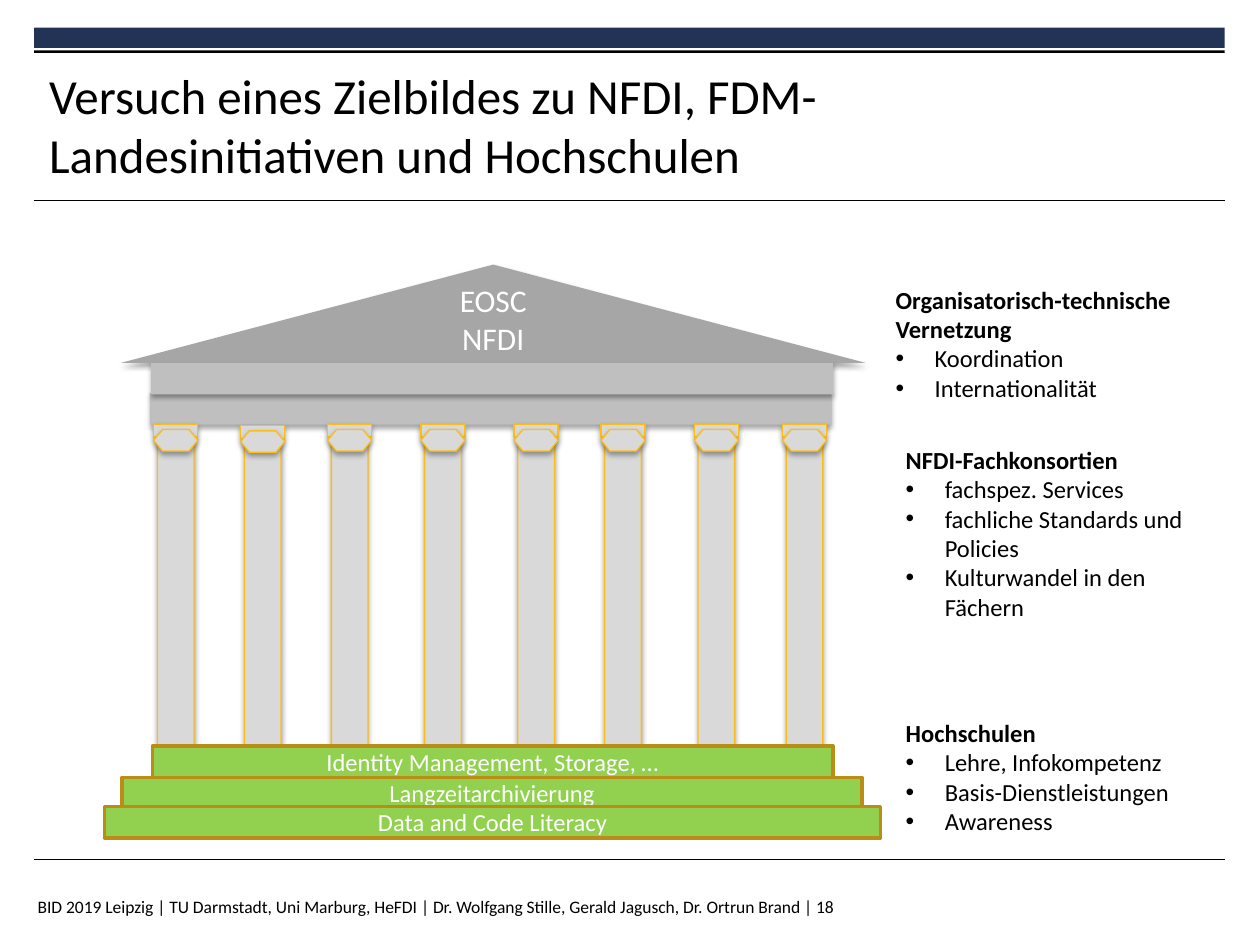
from lxml import etree
from pptx import Presentation
from pptx.dml.color import RGBColor
from pptx.enum.shapes import MSO_CONNECTOR, MSO_SHAPE
from pptx.enum.text import MSO_ANCHOR, MSO_AUTO_SIZE, PP_ALIGN
from pptx.oxml.ns import qn
from pptx.util import Inches, Pt

COLORS = {
    "navy": "233356", "black": "000000", "white": "FFFFFF",
    "roof": "A6A6A6", "beam": "BFBFBF", "column": "D9D9D9",
    "gold": "FBBE18", "step": "92D050", "step_line": "BA8E16",
}


def add_block(shapes, kind, box, fill, line=None, line_width=0.75, shadow=False):
    """Add a filled preset shape, with an optional outline and soft shadow below."""
    shape = shapes.add_shape(kind, *[Inches(value) for value in box])
    shape.shadow.inherit = False
    shape.fill.solid()
    shape.fill.fore_color.rgb = RGBColor.from_string(COLORS[fill])
    if line:
        shape.line.color.rgb = RGBColor.from_string(COLORS[line])
        shape.line.width = Pt(line_width)
    else:
        shape.line.fill.background()
    if shadow:
        effects = shape._element.spPr.find(qn("a:effectLst"))
        outer = etree.SubElement(effects, qn("a:outerShdw"), blurRad=str(Pt(3.1)),
                                 dist=str(Pt(1.8)), dir="5400000", rotWithShape="0")
        color = etree.SubElement(outer, qn("a:srgbClr"), val=COLORS["black"])
        etree.SubElement(color, qn("a:alpha"), val="35000")
    return shape


def add_text(paragraph, text, size, color="black", bold=False):
    run = paragraph.add_run()
    run.text = text
    run.font.name = "Calibri"
    run.font.size = Pt(size)
    run.font.bold = bold
    run.font.color.rgb = RGBColor.from_string(COLORS[color])


presentation = Presentation()
presentation.slide_width = Inches(10)
presentation.slide_height = Inches(7.5)
slide = presentation.slides.add_slide(presentation.slide_layouts[5])

# Header bars and rules
add_block(slide.shapes, MSO_SHAPE.RECTANGLE, (0.27, 0.22, 9.45, 0.16), "navy")
add_block(slide.shapes, MSO_SHAPE.RECTANGLE, (0.27, 0.4, 9.45, 0.02), "black")
for rule_top in (1.59, 6.82):
    rule = slide.shapes.add_connector(MSO_CONNECTOR.STRAIGHT, Inches(0.27), Inches(rule_top),
                                      Inches(9.72), Inches(rule_top))
    rule.line.color.rgb = RGBColor.from_string(COLORS["black"])
    rule.line.width = Pt(0.6)
    etree.SubElement(rule._element.spPr, qn("a:effectLst"))

# Title
title = slide.shapes.title
title.left, title.top, title.width, title.height = [
    Inches(value) for value in (0.39, 0.53, 7.52, 0.92)]
frame = title.text_frame
frame.word_wrap = True
frame.auto_size = MSO_AUTO_SIZE.NONE
frame.vertical_anchor = MSO_ANCHOR.MIDDLE
frame.margin_left = frame.margin_right = frame.margin_top = frame.margin_bottom = 0
frame.paragraphs[0].alignment = PP_ALIGN.LEFT
add_text(frame.paragraphs[0],
         "Versuch eines Zielbildes zu NFDI, FDM-Landesinitiativen und Hochschulen", 28)

# Temple: entablature and roof
temple = slide.shapes.add_group_shape().shapes
add_block(temple, MSO_SHAPE.RECTANGLE, (1.19, 3.12, 5.41, 0.25), "beam", shadow=True)
roof = add_block(temple, MSO_SHAPE.FLOWCHART_EXTRACT, (0.96, 2.1, 5.91, 0.78), "roof",
                 shadow=True)
add_block(temple, MSO_SHAPE.RECTANGLE, (1.2, 2.88, 5.41, 0.25), "beam", shadow=True)
frame = roof.text_frame
frame.word_wrap = True
frame.vertical_anchor = MSO_ANCHOR.BOTTOM
for index, name in enumerate(("EOSC", "NFDI")):
    paragraph = frame.add_paragraph() if index else frame.paragraphs[0]
    paragraph.alignment = PP_ALIGN.CENTER
    add_text(paragraph, name, 18, "white")

# Temple: columns, the second one slightly lower
column_parts = [
    (MSO_SHAPE.CAN, 0.03, 0.07, 0.29, 2.52),
    (MSO_SHAPE.RECTANGLE, 0, 0, 0.35, 0.1),
    (MSO_SHAPE.FLOWCHART_PREPARATION, 0, 0.04, 0.35, 0.17),
]
columns = [(1.22, 3.37), (1.91, 3.38)] + [
    (left, 3.37) for left in (2.6, 3.34, 4.08, 4.77, 5.51, 6.21)]
for left, top in columns:
    for kind, dx, dy, width, height in column_parts:
        add_block(temple, kind, (left + dx, top + dy, width, height), "column", "gold",
                  shadow=True)

# Temple: steps
steps = [
    ("Identity Management, Storage, …", 1.21, 5.92, 5.4),
    ("Langzeitarchivierung", 0.97, 6.17, 5.87),
    ("Data and Code Literacy", 0.83, 6.4, 6.16),
]
for text, left, top, width in steps:
    step = add_block(temple, MSO_SHAPE.RECTANGLE, (left, top, width, 0.25), "step",
                     "step_line", 2)
    step.text_frame.word_wrap = True
    step.text_frame.vertical_anchor = MSO_ANCHOR.MIDDLE
    step.text_frame.paragraphs[0].alignment = PP_ALIGN.CENTER
    add_text(step.text_frame.paragraphs[0], text, 14, "white")

# Explanations beside the temple
notes = [
    ((7.01, 2.21, 2.75, 1.04), "Organisatorisch-technische Vernetzung",
     ["Koordination", "Internationalität"]),
    ((7.09, 3.48, 2.67, 1.75), "NFDI-Fachkonsortien",
     ["fachspez. Services", "fachliche Standards und Policies",
      "Kulturwandel in den Fächern"]),
    ((7.09, 5.65, 2.36, 1.04), "Hochschulen",
     ["Lehre, Infokompetenz", "Basis-Dienstleistungen", "Awareness"]),
]
for box, heading, items in notes:
    frame = slide.shapes.add_textbox(*[Inches(value) for value in box]).text_frame
    frame.word_wrap = True
    add_text(frame.paragraphs[0], heading, 14, bold=True)
    for item in items:
        paragraph = frame.add_paragraph()
        properties = paragraph._p.get_or_add_pPr()
        properties.set("marL", str(Inches(0.31)))
        properties.set("indent", str(Inches(-0.31)))
        etree.SubElement(properties, qn("a:buFont"), typeface="Arial")
        etree.SubElement(properties, qn("a:buChar"), char="•")
        add_text(paragraph, item, 14)

# Footer
footer = slide.shapes.add_textbox(Inches(0.2), Inches(7.06), Inches(7.08), Inches(0.44))
footer.text_frame.word_wrap = False
add_text(footer.text_frame.paragraphs[0],
         "BID 2019 Leipzig | TU Darmstadt, Uni Marburg, HeFDI | "
         "Dr. Wolfgang Stille, Gerald Jagusch, Dr. Ortrun Brand | 18", 10)

presentation.save("out.pptx")
